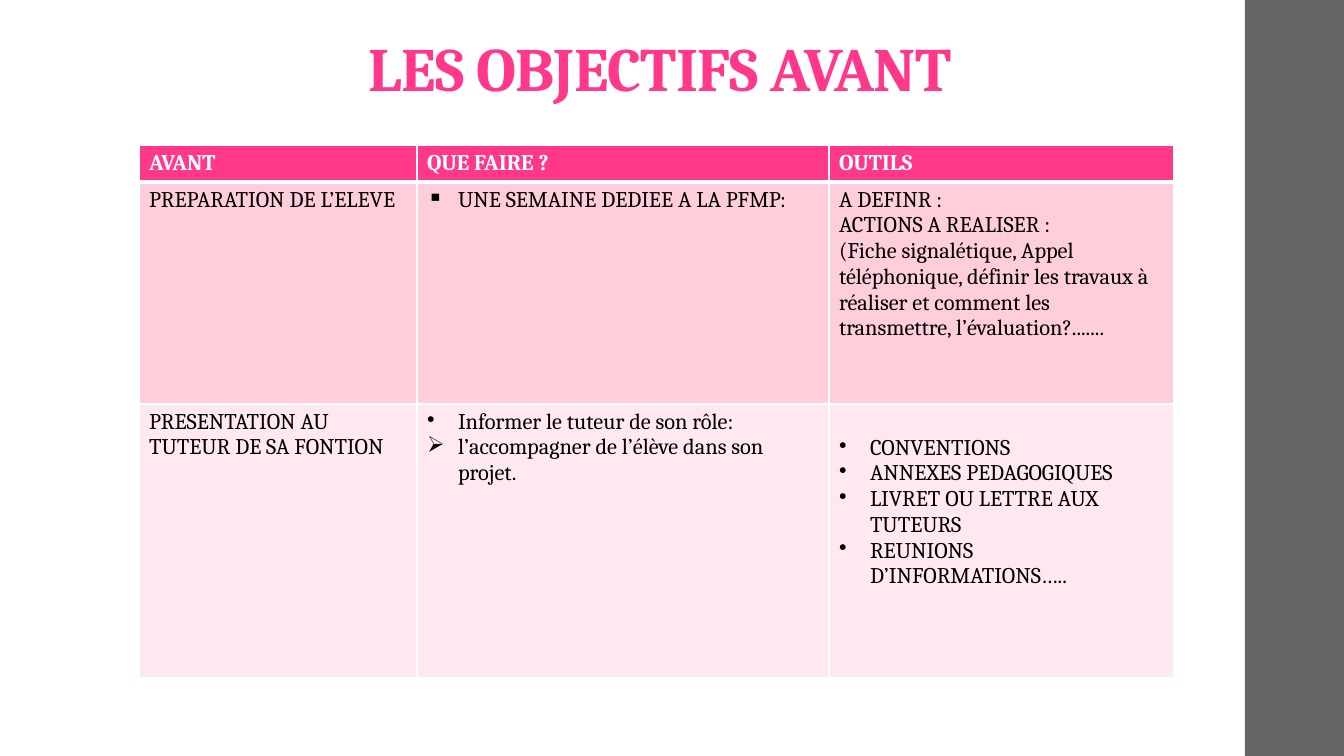
import pptx
import pptx.util
import pptx.dml.color
import pptx.enum.shapes
import pptx.enum.text
import pptx.oxml
import pptx.oxml.ns
import lxml.etree

THEME = {
    "font": "Cambria",
    "title_size": 44,
    "table_size": 16,
    "pink": "FF388C",
    "band": "666666",
    "white": "FFFFFF",
    "black": "000000",
    "row_fills": ["FF388C", "FFCEDA", "FFE8EE"],
}
PX = 914400 / 100.8


def px(length):
    return pptx.util.Emu(round(length * PX))


def style_font(paragraph, size, color, bold):
    paragraph.font.name = THEME["font"]
    paragraph.font.size = pptx.util.Pt(size)
    paragraph.font.bold = bold
    paragraph.font.color.rgb = pptx.dml.color.RGBColor.from_string(color)


presentation = pptx.Presentation()
presentation.slide_width = px(1344)
presentation.slide_height = px(756)
slide = presentation.slides.add_slide(presentation.slide_layouts[6])

side_band = slide.shapes.add_shape(
    pptx.enum.shapes.MSO_SHAPE.RECTANGLE, px(1245), px(0), px(99), px(756)
)
side_band.shadow.inherit = False
side_band.fill.solid()
side_band.fill.fore_color.rgb = pptx.dml.color.RGBColor.from_string(THEME["band"])
side_band.line.fill.background()

title = slide.shapes.add_textbox(px(126), px(29), px(1068), px(81))
title_frame = title.text_frame
title_frame.word_wrap = True
title_frame.vertical_anchor = pptx.enum.text.MSO_ANCHOR.BOTTOM
title_frame.margin_top = px(3)
title_frame.margin_bottom = px(5)
title_paragraph = title_frame.paragraphs[0]
title_paragraph.alignment = pptx.enum.text.PP_ALIGN.CENTER
title_paragraph.line_spacing = 0.9
title_run = title_paragraph.add_run()
title_run.text = "LES OBJECTIFS AVANT"
style_font(title_paragraph, THEME["title_size"], THEME["pink"], True)
title_run.font._element.set("spc", "-50")

rows = [
    [[("", "AVANT")], [("", "QUE FAIRE ?")], [("", "OUTILS")]],
    [
        [("", "PREPARATION DE L’ELEVE")],
        [("▪", "UNE SEMAINE DEDIEE A LA PFMP:")],
        [
            ("", "A DEFINR :"),
            ("", "ACTIONS A REALISER :"),
            ("", "(Fiche signalétique, Appel téléphonique, définir les travaux à "
                 "réaliser et comment les transmettre, l’évaluation?......."),
        ],
    ],
    [
        [("", "PRESENTATION AU TUTEUR DE SA FONTION")],
        [
            ("•", "Informer le tuteur de son rôle:"),
            ("➢", "l’accompagner de l’élève dans son projet."),
        ],
        [
            ("•", "CONVENTIONS"),
            ("•", "ANNEXES PEDAGOGIQUES"),
            ("•", "LIVRET OU LETTRE AUX TUTEURS"),
            ("•", "REUNIONS D’INFORMATIONS….."),
        ],
    ],
]
column_widths = [278, 412, 345]
row_heights = [36, 222, 274]
table = slide.shapes.add_table(
    len(rows), len(column_widths), px(139), px(145),
    px(sum(column_widths)), px(sum(row_heights)),
).table
for column, width in zip(table.columns, column_widths):
    column.width = px(width)
for row, height in zip(table.rows, row_heights):
    row.height = px(height)

for row_index, row_texts in enumerate(rows):
    is_header = row_index == 0
    text_color = THEME["white"] if is_header else THEME["black"]
    border_widths = {
        "lnL": 1,
        "lnR": 1,
        "lnT": 3 if row_index == 1 else 1,
        "lnB": 3 if is_header else 1,
    }
    for column_index, items in enumerate(row_texts):
        cell = table.cell(row_index, column_index)
        cell_properties = cell._tc.get_or_add_tcPr()
        for side, width in border_widths.items():
            cell_properties.append(pptx.oxml.parse_xml(
                f'<a:{side} {pptx.oxml.ns.nsdecls("a")} w="{pptx.util.Pt(width)}">'
                f'<a:solidFill><a:srgbClr val="{THEME["white"]}"/></a:solidFill></a:{side}>'
            ))
        cell.fill.solid()
        cell.fill.fore_color.rgb = pptx.dml.color.RGBColor.from_string(
            THEME["row_fills"][row_index]
        )
        for item_index, (bullet, text) in enumerate(items):
            frame = cell.text_frame
            paragraph = frame.add_paragraph() if item_index else frame.paragraphs[0]
            paragraph.text = text
            style_font(paragraph, THEME["table_size"], text_color, is_header)
            if bullet:
                paragraph_properties = paragraph._p.get_or_add_pPr()
                paragraph_properties.set("marL", str(px(31)))
                paragraph_properties.set("indent", str(px(-31)))
                bullet_element = lxml.etree.Element(pptx.oxml.ns.qn("a:buChar"))
                bullet_element.set("char", bullet)
                paragraph_properties.insert(0, bullet_element)

table.cell(2, 2).margin_top = px(31)

presentation.save("out.pptx")
